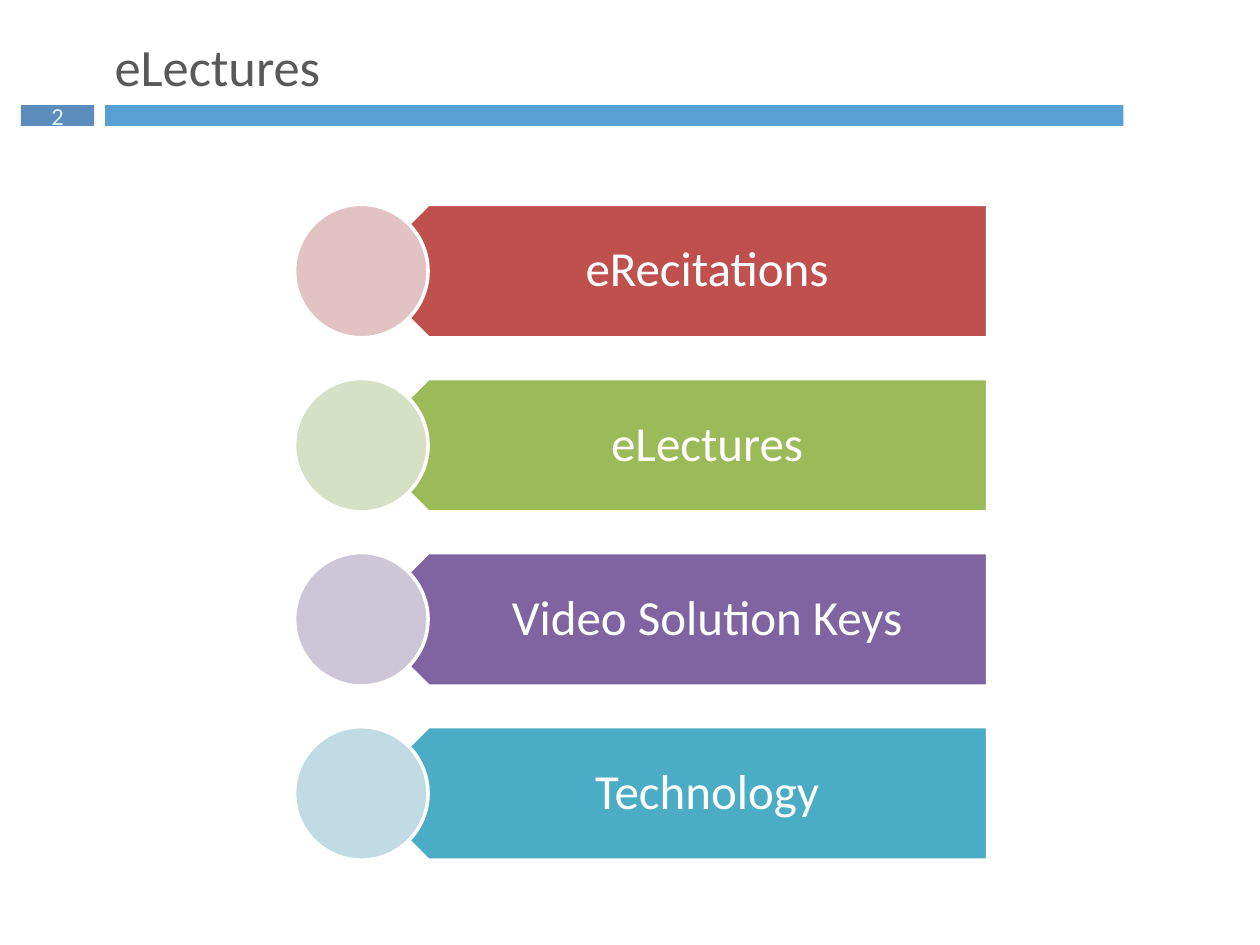
import pptx
import pptx.dml.color
import pptx.enum.shapes
import pptx.enum.text
import pptx.util

Cm = pptx.util.Cm
Pt = pptx.util.Pt
SHAPE = pptx.enum.shapes.MSO_SHAPE
ALIGN = pptx.enum.text.PP_ALIGN
ANCHOR = pptx.enum.text.MSO_ANCHOR

COLORS = {
    "white": "FFFFFF", "title": "595959",
    "bar": "56A0D3", "number_box": "5C8CBB", "number": "DEF5FA",
    "red": "C0504D", "pale_red": "E2C2C2",
    "green": "9BBB59", "pale_green": "D5E0C4",
    "purple": "8064A2", "pale_purple": "CDC6D7",
    "teal": "4BACC6", "pale_teal": "C1DBE5",
}


def color(name):
    return pptx.dml.color.RGBColor.from_string(COLORS[name])


class SlideBuilder:
    font = "Calibri"

    def __init__(self, page):
        self.page = page

    def add_text(self, box, text, size, ink, align, anchor, insets, wrap=True):
        frame = box.text_frame
        frame.word_wrap = wrap
        frame.auto_size = pptx.enum.text.MSO_AUTO_SIZE.NONE
        frame.vertical_anchor = anchor
        (frame.margin_left, frame.margin_top,
         frame.margin_right, frame.margin_bottom) = (Cm(inset) for inset in insets)
        para = frame.paragraphs[0]
        para.alignment = align
        span = para.add_run()
        span.text = text
        span.font.name = self.font
        span.font.size = Pt(size)
        span.font.color.rgb = color(ink)
        return para

    def title(self, text, left, top, width, height):
        box = self.page.shapes.title
        box.left, box.top, box.width, box.height = map(Cm, (left, top, width, height))
        self.add_text(box, text, 30, "title", ALIGN.LEFT, ANCHOR.TOP,
                      (0.25, 0.13, 0.25, 0.13))

    def shape(self, kind, left, top, width, height, fill, outline=None):
        shape = self.page.shapes.add_shape(kind, *map(Cm, (left, top, width, height)))
        shape.shadow.inherit = False
        shape.fill.solid()
        shape.fill.fore_color.rgb = color(fill)
        if outline:
            shape.line.color.rgb = color(outline)
            shape.line.width = Pt(2)
        else:
            shape.line.fill.background()
        return shape

    def label(self, text, left, top, width, height):
        box = self.page.shapes.add_textbox(*map(Cm, (left, top, width, height)))
        para = self.add_text(box, text, 28, "white", ALIGN.CENTER, ANCHOR.MIDDLE,
                             (1.19, 0.3, 0.56, 0.3))
        para.line_spacing = 0.9

    def topic(self, text, top, fill, pale_fill):
        height = 2.69
        arrow = self.shape(SHAPE.PENTAGON, 7.29, top, 12.62, height, fill, "white")
        arrow.rotation = 180
        self.label(text, 7.97, top, 11.94, height)
        self.shape(SHAPE.OVAL, 5.94, top, height, height, pale_fill, "white")


def main():
    deck = pptx.Presentation()
    deck.slide_width, deck.slide_height = Cm(25.4), Cm(19.05)
    builder = SlideBuilder(deck.slides.add_slide(deck.slide_layouts[5]))

    # Header bar, slide number and title
    builder.shape(SHAPE.RECTANGLE, 2.12, 2.12, 20.53, 0.42, "bar")
    number_box = builder.shape(SHAPE.RECTANGLE, 0.42, 2.12, 1.48, 0.42, "number_box")
    builder.add_text(number_box, "2", 14, "number", ALIGN.CENTER, ANCHOR.MIDDLE,
                     (0.2, 0.1, 0.2, 0.1), wrap=False)
    builder.title("eLectures", 2.06, 0.56, 23.7, 1.7)

    # Topic rows
    topics = [("eRecitations", "red"), ("eLectures", "green"),
              ("Video Solution Keys", "purple"), ("Technology", "teal")]
    for row, (text, hue) in enumerate(topics):
        builder.topic(text, 4.12 + row * 3.51, hue, f"pale_{hue}")

    deck.save("out.pptx")


if __name__ == "__main__":
    main()
